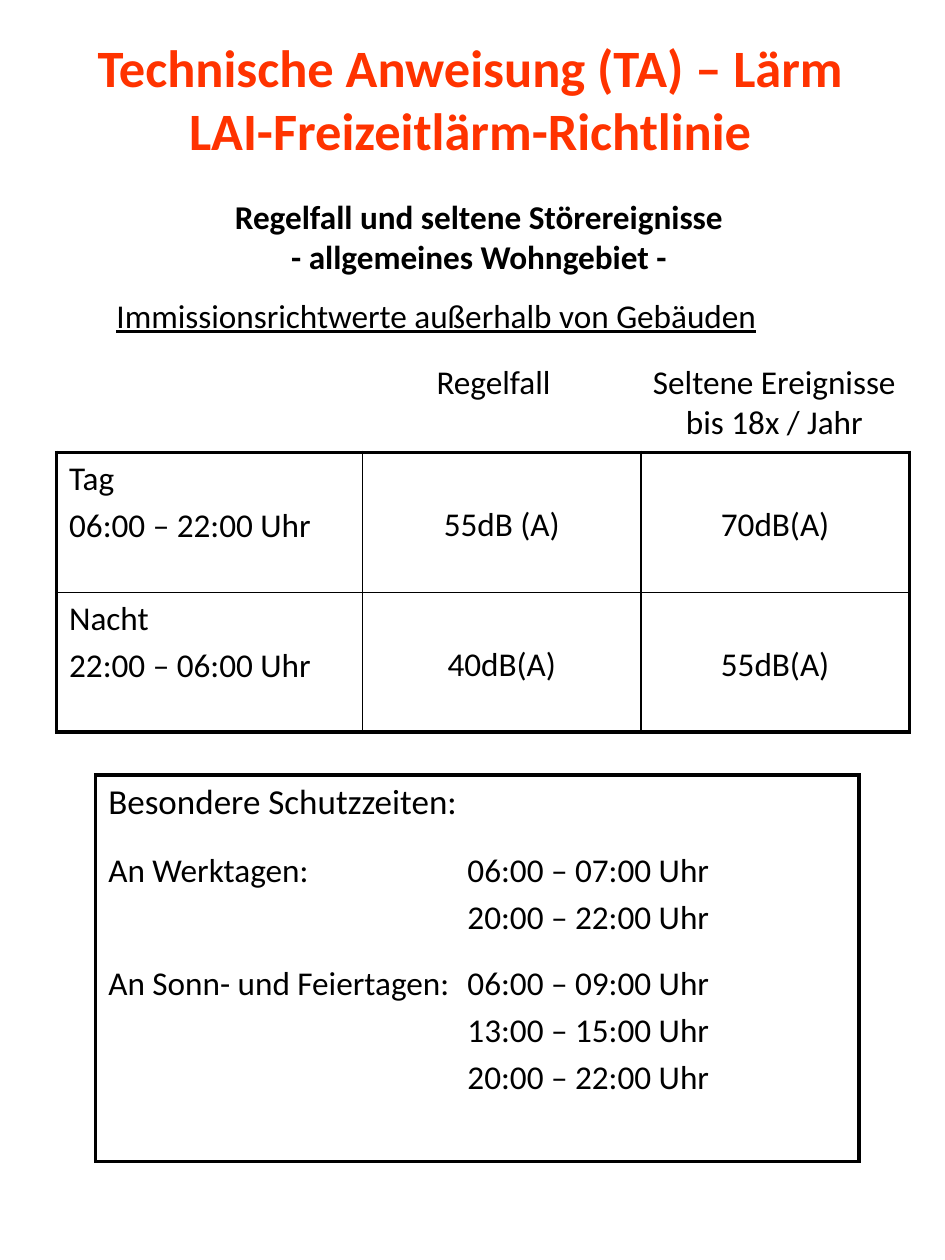
from dataclasses import dataclass

from lxml.etree import SubElement
from pptx import Presentation
from pptx.dml.color import RGBColor as RGB
from pptx.enum.text import MSO_AUTO_SIZE as Auto, MSO_ANCHOR as Anchor, PP_ALIGN as Align
from pptx.oxml.ns import qn
from pptx.util import Cm, Length, Pt


@dataclass(frozen=True)
class Theme:
    font: str = "Calibri"
    text: RGB = RGB(0, 0, 0)
    title: RGB = RGB(0xFF, 0x33, 0x00)
    title_size: Length = Pt(30)
    lead_size: Length = Pt(20)
    body_size: Length = Pt(19)
    outer_line: Length = Pt(2.25)
    inner_line: Length = Pt(1)


T = Theme()


@dataclass(frozen=True)
class Box:
    left: float
    top: float
    width: float
    height: float

    def lengths(self) -> tuple[Length, ...]:
        return tuple(Cm(v) for v in (self.left, self.top, self.width, self.height))


@dataclass(frozen=True)
class Line:
    text: str
    size: Length = T.body_size
    color: RGB = T.text
    align: Align = Align.LEFT
    before: float = 0
    bold: bool = False
    underline: bool = False
    tabs: tuple[float, ...] = ()
    tab_align: str = "l"


@dataclass(frozen=True)
class Period:
    name: str
    hours: str
    limits: tuple[str, str]


def write(tf, lines: list[Line]) -> None:
    for i, line in enumerate(lines):
        p = tf.paragraphs[0] if i == 0 else tf.add_paragraph()
        p.text = line.text
        p.alignment = line.align
        p.space_before = Pt(line.before)
        if line.tabs:
            stops = SubElement(p._p.get_or_add_pPr(), qn("a:tabLst"))
            for pos in line.tabs:
                SubElement(stops, qn("a:tab"), pos=str(Cm(pos)), algn=line.tab_align)
        p.font.name = T.font
        p.font.size = line.size
        p.font.color.rgb = line.color
        p.font.bold = line.bold
        p.font.underline = line.underline


def add_text(s, box: Box, lines: list[Line], right_inset: float = 0.25) -> None:
    tf = s.shapes.add_textbox(*box.lengths()).text_frame
    tf.word_wrap = True
    tf.margin_right = Cm(right_inset)
    write(tf, lines)


def add_grid(s, left: float, top: float, widths: list[float], heights: list[float]):
    box = Box(left, top, sum(widths), sum(heights))
    rows, cols = len(heights), len(widths)
    table = s.shapes.add_table(rows, cols, *box.lengths()).table
    table.first_row = table.horz_banding = False
    for col, width in zip(table.columns, widths):
        col.width = Cm(width)
    for row, height in zip(table.rows, heights):
        row.height = Cm(height)
    for r in range(rows):
        for c in range(cols):
            cell = table.cell(r, c)
            edges = {"L": c == 0, "R": c == cols - 1, "T": r == 0, "B": r == rows - 1}
            for side, outer in edges.items():
                width = T.outer_line if outer else T.inner_line
                ln = SubElement(cell._tc.get_or_add_tcPr(), qn(f"a:ln{side}"), w=str(width))
                fill = SubElement(ln, qn("a:solidFill"))
                SubElement(fill, qn("a:srgbClr"), val=str(T.text))
            cell.fill.background()
    return table


def add_limits(s, periods: list[Period]) -> None:
    table = add_grid(s, 1.14, 9.12, [6.17, 5.61, 5.41], [2.82] * len(periods))
    for r, period in enumerate(periods):
        write(table.cell(r, 0).text_frame, [Line(period.name), Line(period.hours, before=3.8)])
        for c, limit in enumerate(period.limits, 1):
            cell = table.cell(r, c)
            cell.margin_top = Cm(1.07)
            write(cell.text_frame, [Line(limit, align=Align.CENTER)])


def add_quiet_times(s, groups: dict[str, list[str]]) -> None:
    lines = [Line("Besondere Schutzzeiten:", T.lead_size)]
    for name, times in groups.items():
        for i, time in enumerate(times):
            label, before = ("", 3.8) if i else (name, 15.2)
            lines.append(Line(f"{label}\t{time}", before=before, tabs=(7.24,)))
    table = add_grid(s, 1.93, 15.62, [15.39], [7.8])
    write(table.cell(0, 0).text_frame, lines)


def main() -> None:
    prs = Presentation()
    prs.slide_width, prs.slide_height = Cm(19.05), Cm(25.4)
    s = prs.slides.add_slide(prs.slide_layouts[5])

    title = s.shapes.title
    title.left, title.top, title.width, title.height = Box(0.91, 0.46, 17.15, 3.02).lengths()
    tf = title.text_frame
    tf.auto_size = Auto.NONE
    tf.vertical_anchor = Anchor.MIDDLE
    write(tf, [Line("Technische Anweisung (TA) – Lärm\vLAI-Freizeitlärm-Richtlinie",
                    T.title_size, T.title, Align.CENTER, bold=True)])

    add_limits(s, [
        Period("Tag", "06:00 – 22:00 Uhr", ("55dB (A)", "70dB(A)")),
        Period("Nacht", "22:00 – 06:00 Uhr", ("40dB(A)", "55dB(A)")),
    ])
    add_quiet_times(s, {
        "An Werktagen:": ["06:00 – 07:00 Uhr", "20:00 – 22:00 Uhr"],
        "An Sonn- und Feiertagen:": ["06:00 – 09:00 Uhr", "13:00 – 15:00 Uhr",
                                     "20:00 – 22:00 Uhr"],
    })
    add_text(s, Box(0.71, 5.82, 17.6, 1.12),
             [Line("Immissionsrichtwerte außerhalb von Gebäuden",
                   align=Align.CENTER, underline=True)], right_inset=1.68)
    add_text(s, Box(0.91, 7.16, 17.75, 1.96),
             [Line(text, tabs=(8.79, 14.45), tab_align="ctr")
              for text in ("\tRegelfall\tSeltene Ereignisse", "\t\tbis 18x / Jahr")])
    add_text(s, Box(0.97, 3.84, 17.37, 1.88),
             [Line(text, align=Align.CENTER, bold=True)
              for text in ("Regelfall und seltene Störereignisse",
                           "- allgemeines Wohngebiet -")])
    prs.save("out.pptx")


if __name__ == "__main__":
    main()
